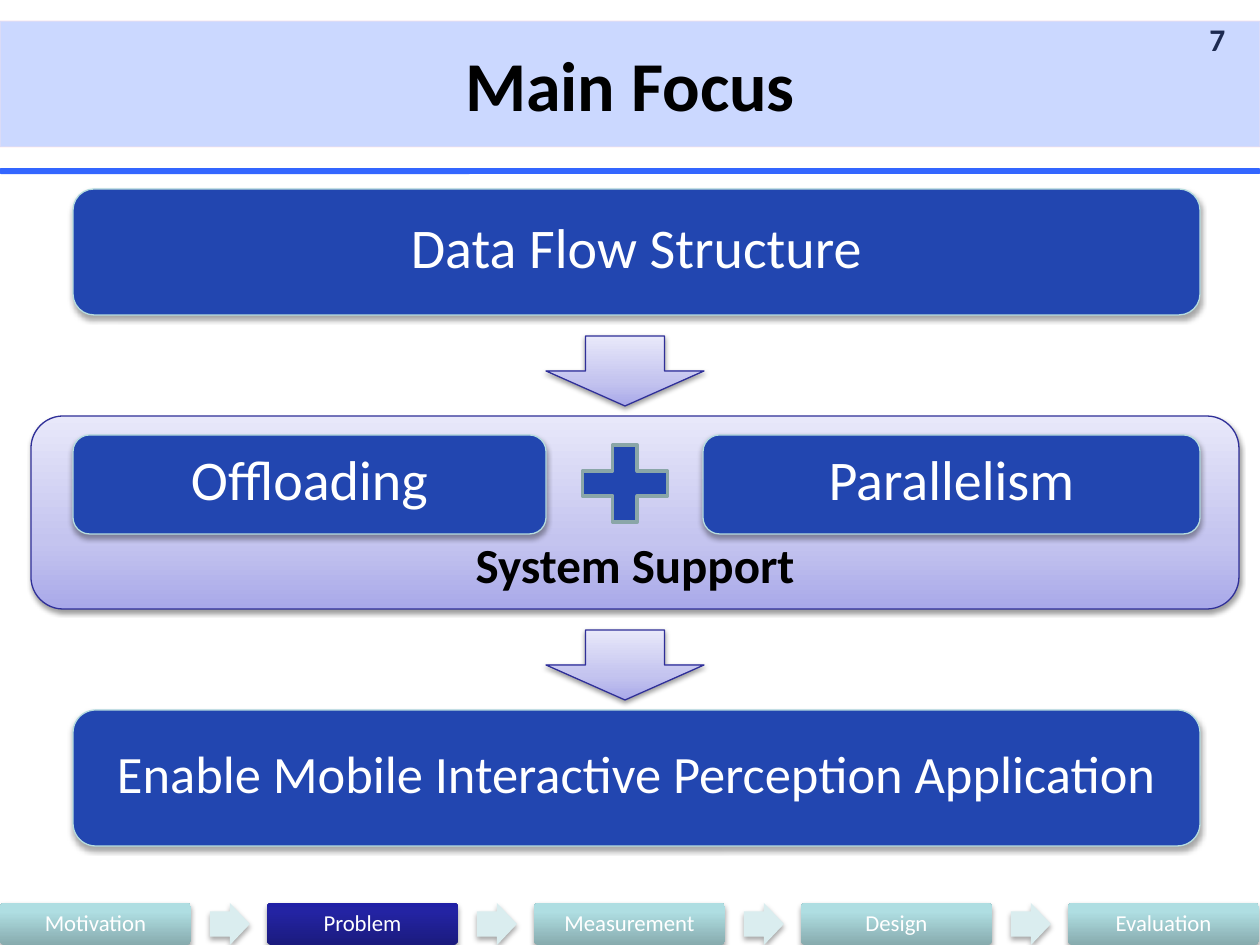
import lxml.etree
import pptx
import pptx.dml.color
import pptx.enum.shapes
import pptx.enum.text
import pptx.oxml.ns
import pptx.util

SHAPE = pptx.enum.shapes.MSO_SHAPE
ALIGN = pptx.enum.text.PP_ALIGN
ANCHOR = pptx.enum.text.MSO_ANCHOR
qn = pptx.oxml.ns.qn

COLORS = {
    "rule": "3366FF", "title_edge": "FFE4E5", "black": "000000", "number": "161616",
    "box": "2246B0", "box_edge": "B6DCDF", "plus_edge": "8AA6A8", "lilac_edge": "2F2F98",
    "white": "FFFFFF", "step_arrow": "DAEDEF",
}
GRADIENTS = {
    "lilac": [(0, "A9A9E9"), (35, "C4C4EF"), (100, "E8E8FA")],
    "step": [(0, "87ABAE"), (80, "AFDEE2"), (100, "AFE0E4")],
    "current_step": [(0, "1B1B7E"), (80, "2323A3"), (100, "2020A6")],
}


def px(length):
    return round(length * 914400 / 126)


def add_child(parent, tag, **attributes):
    values = {name: str(value) for name, value in attributes.items()}
    return lxml.etree.SubElement(parent, qn(tag), values)


class FlowSlide:
    font = "Calibri"

    def __init__(self, presentation):
        self.slide = presentation.slides.add_slide(presentation.slide_layouts[6])

    def color(self, name):
        return pptx.dml.color.RGBColor.from_string(COLORS[name])

    def gradient(self, shape, name):
        shape.fill.gradient()
        shape.fill.gradient_angle = 90
        stops = shape.fill._fill._gradFill.find(qn("a:gsLst"))
        for stop in list(stops):
            stops.remove(stop)
        for position, hex_color in GRADIENTS[name]:
            stop = add_child(stops, "a:gs", pos=position * 1000)
            add_child(stop, "a:srgbClr", val=hex_color)

    def shadow(self, shape, opacity, distance):
        effects = shape._element.spPr.find(qn("a:effectLst"))
        outer = add_child(effects, "a:outerShdw", blurRad=pptx.util.Pt(3.1),
                          dist=pptx.util.Pt(distance), dir=5400000, rotWithShape=0)
        black = add_child(outer, "a:srgbClr", val=COLORS["black"])
        add_child(black, "a:alpha", val=opacity * 1000)

    def shape(self, kind, area, fill, edge=None, width=0.75, adjust=()):
        shape = self.slide.shapes.add_shape(kind, *map(px, area))
        for index, value in enumerate(adjust):
            shape.adjustments[index] = value
        if fill in GRADIENTS:
            self.gradient(shape, fill)
        else:
            shape.fill.solid()
            shape.fill.fore_color.rgb = self.color(fill)
        if edge:
            shape.line.color.rgb = self.color(edge)
            shape.line.width = pptx.util.Pt(width)
        else:
            shape.line.fill.background()
        shape.shadow.inherit = False
        return shape

    def text(self, shape, words, size, color="white", bold=False, align=ALIGN.CENTER,
             spacing=0.8, anchor=ANCHOR.MIDDLE):
        frame = shape.text_frame
        frame.text = words
        frame.word_wrap = True
        frame.vertical_anchor = anchor
        paragraph = frame.paragraphs[0]
        paragraph.alignment = align
        paragraph.line_spacing = spacing
        font = paragraph.runs[0].font
        font.name = self.font
        font.size = pptx.util.Pt(size)
        font.bold = bold
        font.color.rgb = self.color(color)

    def title(self, words):
        band = self.shape(SHAPE.RECTANGLE, (0, 21, 1260, 126), "rule", "title_edge", 1)
        paints = band._element.spPr.iter(qn("a:srgbClr"))
        for paint, opacity in zip(paints, (25, 30)):
            add_child(paint, "a:alpha", val=opacity * 1000)
        self.text(band, words, 40, "black", True, spacing=1.0)

    def page_number(self, words):
        box = self.slide.shapes.add_textbox(*map(px, (1197, 21, 63, 42)))
        self.text(box, words, 18, "number", True, ALIGN.LEFT)

    def box(self, area, words, size=32):
        box = self.shape(SHAPE.ROUNDED_RECTANGLE, area, "box", "box_edge")
        self.shadow(box, 35, 1.8)
        self.text(box, words, size)

    def panel(self, area, words):
        panel = self.shape(SHAPE.ROUNDED_RECTANGLE, area, "lilac", "lilac_edge")
        self.shadow(panel, 38, 1.6)
        self.text(panel, words, 28, "black", True, anchor=ANCHOR.BOTTOM)

    def down_arrow(self, top):
        arrow = self.shape(SHAPE.DOWN_ARROW, (546, top, 158, 70), "lilac", "lilac_edge")
        self.shadow(arrow, 38, 1.6)

    def steps(self, names, current):
        top, pitch, width, height = 903, 267, 191, 42
        for index, name in enumerate(names):
            left = index * pitch
            fill = "current_step" if name == current else "step"
            step = self.shape(SHAPE.ROUNDED_RECTANGLE, (left, top, width, height), fill,
                              adjust=(0.1,))
            self.shadow(step, 35, 1.8)
            self.text(step, name, 13, spacing=0.9)
            if index < len(names) - 1:
                arrow = self.shape(SHAPE.RIGHT_ARROW, (left + 210, top, 40, height),
                                   "step_arrow", adjust=(0.6, 0.5))
                self.shadow(arrow, 35, 1.8)


def main():
    presentation = pptx.Presentation()
    presentation.slide_width = px(1260)
    presentation.slide_height = px(945)
    focus = FlowSlide(presentation)

    focus.shape(SHAPE.ROUNDED_RECTANGLE, (0, 168, 1260, 6), "rule")
    focus.page_number("7")
    focus.title("Main Focus")
    focus.box((73, 189, 1127, 126), "Data Flow Structure")
    focus.box((73, 710, 1127, 136), "Enable Mobile Interactive Perception Application", 30)
    focus.steps(["Motivation", "Problem", "Measurement", "Design", "Evaluation"], "Problem")
    focus.panel((31, 416, 1208, 193), "System Support")
    focus.box((73, 435, 473, 99), "Offloading")
    focus.box((703, 435, 497, 99), "Parallelism")
    for top in (336, 630):
        focus.down_arrow(top)
    focus.shape(SHAPE.MATH_PLUS, (567, 431, 116, 105), "box", "plus_edge", 2)

    presentation.save("out.pptx")


if __name__ == "__main__":
    main()
